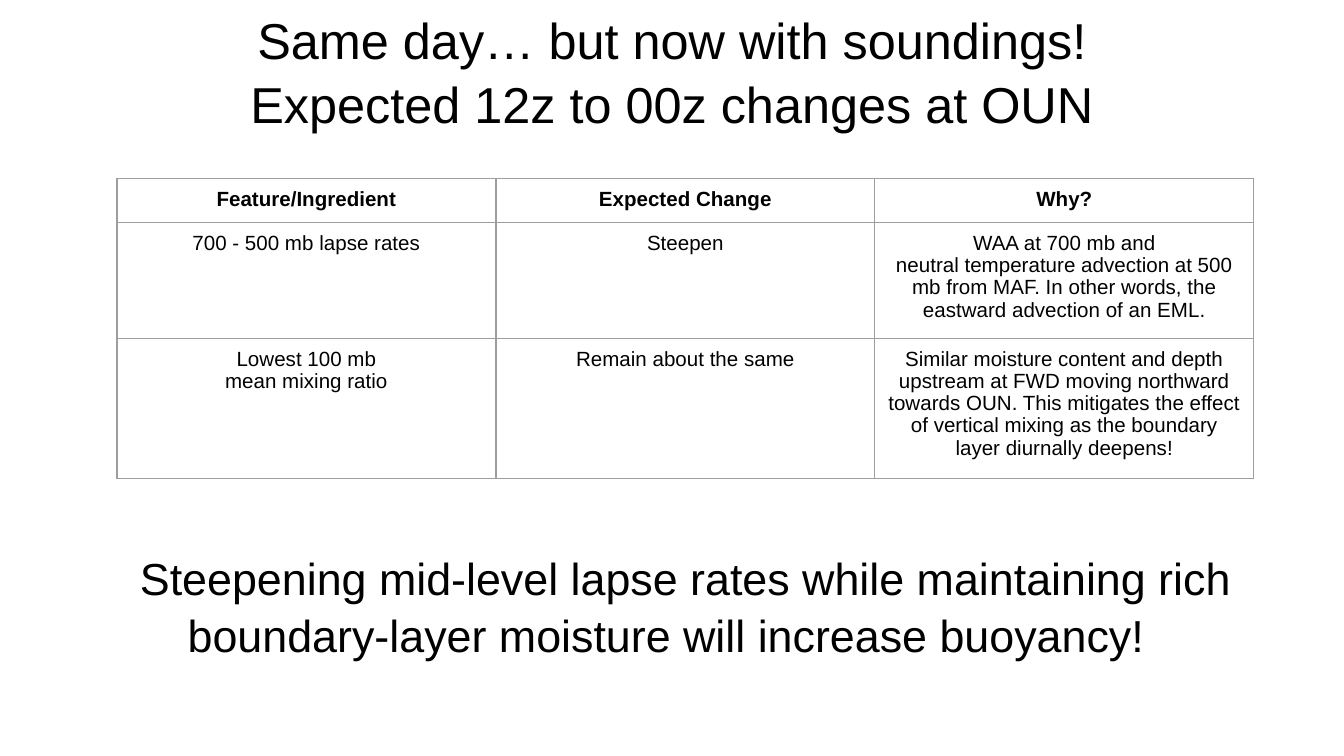
from dataclasses import dataclass

import pptx
import pptx.dml.color
import pptx.enum.text
import pptx.oxml
import pptx.oxml.ns
import pptx.util

PX = 4572  # EMU: 200 px to the inch
BLACK = pptx.dml.color.RGBColor(0x00, 0x00, 0x00)
BORDER = pptx.dml.color.RGBColor(0x9E, 0x9E, 0x9E)
FONT = "Arial"
CENTER = pptx.enum.text.PP_ALIGN.CENTER
MIDDLE = pptx.enum.text.MSO_ANCHOR.MIDDLE


@dataclass(frozen=True)
class Heading:
    x: int
    y: int
    w: int
    h: int
    size: int
    lines: tuple[str, ...]
    right_inset: int = 20
    first_indent: int = 0


# The indent and wider right inset set the second line left of the first.
HEADINGS = (
    Heading(100, 34, 1800, 140, 27,
            ("Same day… but now with soundings!", "Expected 12z to 00z changes at OUN")),
    Heading(120, 806, 1800, 188, 24,
            ("Steepening mid-level lapse rates while maintaining rich "
             "boundary-layer moisture will increase buoyancy!",),
            right_inset=78, first_indent=58),
)

TABLE_X, TABLE_Y = 174, 266
COLUMN_W = 564
ROW_HEIGHTS = (64, 148, 134)
ROWS = (
    (("Feature/Ingredient",), ("Expected Change",), ("Why?",)),
    (("700 - 500 mb lapse rates",), ("Steepen",),
     ("WAA at 700 mb and",
      "neutral temperature advection at 500 mb from MAF. In other words, "
      "the eastward advection of an EML.")),
    (("Lowest 100 mb", "mean mixing ratio"), ("Remain about the same",),
     ("Similar moisture content and depth upstream at FWD moving northward "
      "towards OUN. This mitigates the effect of vertical mixing as the "
      "boundary layer diurnally deepens!",)),
)


def px(n: int) -> pptx.util.Emu:
    return pptx.util.Emu(n * PX)


def set_format(target, values: dict) -> None:
    for name, value in values.items():
        setattr(target, name, value)


def write_lines(tf, lines: tuple[str, ...], size: int, spacing: float, bold: bool = False) -> None:
    """Write one centred paragraph per line."""
    for i, line in enumerate(lines):
        p = tf.paragraphs[0] if i == 0 else tf.add_paragraph()
        set_format(p, {"alignment": CENTER, "line_spacing": spacing})
        r = p.add_run()
        r.text = line
        set_format(r.font, {"name": FONT, "size": pptx.util.Pt(size), "bold": bold})
        r.font.color.rgb = BLACK


def add_heading(s, heading: Heading) -> None:
    sp = s.shapes.add_textbox(px(heading.x), px(heading.y), px(heading.w), px(heading.h))
    tf = sp.text_frame
    set_format(tf, {
        "word_wrap": True, "vertical_anchor": MIDDLE,
        "margin_left": px(20), "margin_right": px(heading.right_inset),
        "margin_top": px(10), "margin_bottom": px(10),
    })
    write_lines(tf, heading.lines, heading.size, 1.05)
    if heading.first_indent:
        p_pr = tf.paragraphs[0]._p.get_or_add_pPr()
        p_pr.set("marL", "0")
        p_pr.set("indent", str(px(heading.first_indent)))


def add_borders(cell) -> None:
    tc_pr = cell._tc.get_or_add_tcPr()
    for i, side in enumerate(("lnL", "lnR", "lnT", "lnB")):
        tc_pr.insert(i, pptx.oxml.parse_xml(
            f'<a:{side} {pptx.oxml.ns.nsdecls("a")} w="{pptx.util.Pt(0.75)}">'
            f'<a:solidFill><a:srgbClr val="{BORDER}"/></a:solidFill></a:{side}>'))


def add_changes_table(s) -> None:
    columns = len(ROWS[0])
    frame = s.shapes.add_table(len(ROWS), columns, px(TABLE_X), px(TABLE_Y),
                               px(columns * COLUMN_W), px(sum(ROW_HEIGHTS)))
    table = frame.table
    set_format(table, {"first_row": False, "horz_banding": False})
    for column in table.columns:
        column.width = px(COLUMN_W)
    for i, (row, height) in enumerate(zip(ROWS, ROW_HEIGHTS)):
        table.rows[i].height = px(height)
        for j, lines in enumerate(row):
            cell = table.cell(i, j)
            set_format(cell, {
                "margin_left": px(20), "margin_right": px(20),
                "margin_top": px(15), "margin_bottom": px(15),
            })
            cell.fill.background()
            write_lines(cell.text_frame, lines, 11, 0.97, bold=i == 0)
            add_borders(cell)


def main() -> None:
    prs = pptx.Presentation()
    set_format(prs, {"slide_width": px(2000), "slide_height": px(1125)})
    s = prs.slides.add_slide(prs.slide_layouts[6])
    title, conclusion = HEADINGS
    add_heading(s, title)
    add_changes_table(s)
    add_heading(s, conclusion)
    prs.save("out.pptx")


if __name__ == "__main__":
    main()
